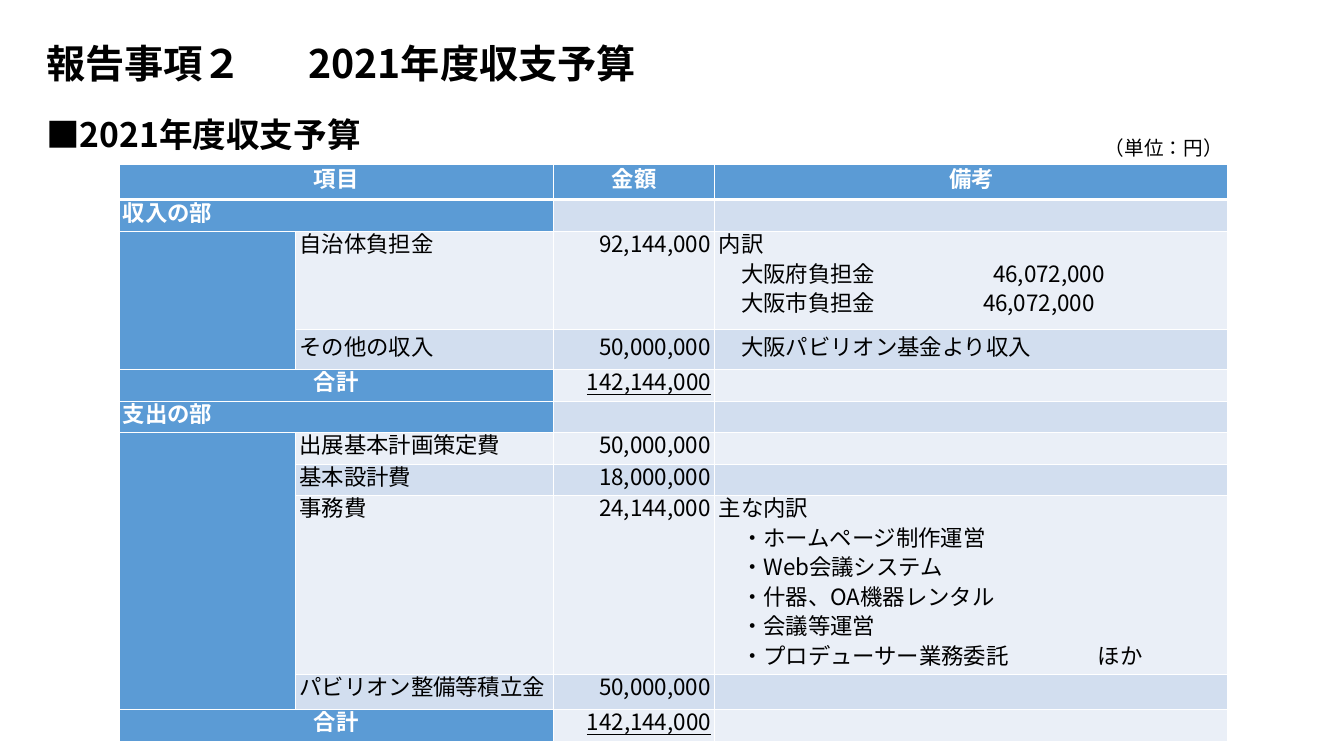
from lxml.etree import SubElement
from pptx import Presentation
from pptx.dml.color import RGBColor
from pptx.enum.lang import MSO_LANGUAGE_ID
from pptx.enum.text import MSO_ANCHOR, PP_ALIGN
from pptx.oxml.ns import qn
from pptx.util import Inches, Pt

FONT = "Noto Sans CJK JP"
HUE = {"head": "5B9BD5", "dark": "D2DEEF", "pale": "EAEFF7",
       "white": "FFFFFF", "black": "000000"}
TITLE = "報告事項２\t2021年度収支予算"
SUB = "■2021年度収支予算"
UNIT = "（単位：円）"

# Each note line: text, tab stop in inches
SHARES = [("内訳", 0),
          ("　大阪府負担金\t46,072,000", 2.72),
          ("　大阪市負担金\t46,072,000", 2.62)]
FUND = [("　大阪パビリオン基金より収入", 0)]
COSTS = [("主な内訳", 0),
         ("　・ホームページ制作運営", 0),
         ("　・Web会議システム", 0),
         ("　・什器、OA機器レンタル", 0),
         ("　・会議等運営", 0),
         ("　・プロデューサー業務委託\tほか", 3.76)]

# Each row: kind, label, amount, notes, height, vertical centring
ROWS = [
    ("top", "項目", "金額", [("備考", 0)], 0.35, True),
    ("part", "収入の部", "", [], 0.32, True),
    ("item", "自治体負担金", "92,144,000", SHARES, 0.97, False),
    ("item", "その他の収入", "50,000,000", FUND, 0.4, True),
    ("sum", "合計", "142,144,000", [], 0.31, True),
    ("part", "支出の部", "", [], 0.31, True),
    ("item", "出展基本計画策定費", "50,000,000", [], 0.31, False),
    ("item", "基本設計費", "18,000,000", [], 0.31, False),
    ("item", "事務費", "24,144,000", COSTS, 1.77, False),
    ("item", "パビリオン整備等積立金", "50,000,000", [], 0.35, False),
    ("sum", "合計", "142,144,000", [], 0.31, False),
]
COLS = [1.75, 2.56, 1.6, 5.09]
GROUPS = [(2, 3), (6, 9)]


def rgb(name):
    return RGBColor.from_string(HUE[name])


def write(frame, lines, size=16, color="black", bold=False, under=False,
          align=PP_ALIGN.LEFT, lead=None, gap=0):
    for n, (text, tab) in enumerate(lines):
        para = frame.add_paragraph() if n else frame.paragraphs[0]
        para.alignment = align
        para.space_before = Pt(gap)
        if lead:
            para.line_spacing = lead
        if tab:
            stops = SubElement(para._p.get_or_add_pPr(), qn("a:tabLst"))
            SubElement(stops, qn("a:tab"), pos=str(Inches(tab)), algn="l")
        if not text:
            # A small end mark keeps empty cells from stretching their row
            SubElement(para._p, qn("a:endParaRPr"), sz="600")
            continue
        run = para.add_run()
        run.text = text
        font = run.font
        font.size, font.name = Pt(size), FONT
        font.bold, font.underline = bold, under
        font.language_id = MSO_LANGUAGE_ID.JAPANESE
        font.color.rgb = rgb(color)
        SubElement(run._r.get_or_add_rPr(), qn("a:ea"), typeface=FONT)


def paint(cell, color, top):
    """Fill the cell and give it white borders, thicker under the top row."""
    props = cell._tc.get_or_add_tcPr()
    for side in ("lnL", "lnR", "lnT", "lnB"):
        wide = 3 if top and side == "lnB" else 1
        line = SubElement(props, qn("a:" + side), w=str(Pt(wide)))
        ink = SubElement(line, qn("a:solidFill"))
        SubElement(ink, qn("a:srgbClr"), val=HUE["white"])
    cell.fill.solid()
    cell.fill.fore_color.rgb = rgb(color)


def fill(cell, lines, middle, **form):
    cell.margin_left = cell.margin_right = cell.margin_bottom = Inches(0.04)
    cell.margin_top = Inches(0.12)
    cell.vertical_anchor = MSO_ANCHOR.MIDDLE if middle else MSO_ANCHOR.TOP
    write(cell.text_frame, lines or [("", 0)], lead=Pt(11), gap=10, **form)


def place(shape, *box):
    shape.left, shape.top, shape.width, shape.height = map(Inches, box)


def label(slide, box, text, wrap=True, **form):
    frame = slide.shapes.add_textbox(*map(Inches, box)).text_frame
    frame.word_wrap = wrap
    frame.vertical_anchor = MSO_ANCHOR.MIDDLE if wrap else MSO_ANCHOR.TOP
    write(frame, [(text, 0)], **form)


def budget(slide):
    high = sum(row[4] for row in ROWS)
    table = slide.shapes.add_table(
        len(ROWS), len(COLS), *map(Inches, (1.18, 1.63, sum(COLS), high))).table
    for col, wide in zip(table.columns, COLS):
        col.width = Inches(wide)
    for r, (kind, name, amount, notes, tall, middle) in enumerate(ROWS):
        table.rows[r].height = Inches(tall)
        top, item = kind == "top", kind == "item"
        band = "dark" if r % 2 else "pale"
        for c in range(len(COLS)):
            blue = top or c == 0 or (c == 1 and not item)
            paint(table.cell(r, c), "head" if blue else band, top)
        mid = PP_ALIGN.CENTER
        plain = {"color": "white" if top else "black", "bold": top}
        fill(table.cell(r, 0 if item else 1), [], middle)
        fill(table.cell(r, 1 if item else 0), [(name, 0)], middle,
             color="black" if item else "white", bold=not item,
             align=mid if kind in ("top", "sum") else PP_ALIGN.LEFT)
        fill(table.cell(r, 2), [(amount, 0)], middle, under=kind == "sum",
             align=mid if top else PP_ALIGN.RIGHT, **plain)
        fill(table.cell(r, 3), notes, middle,
             align=mid if top else PP_ALIGN.LEFT, **plain)
        if not item:
            table.cell(r, 0).merge(table.cell(r, 1))
    for first, last in GROUPS:
        table.cell(first, 0).merge(table.cell(last, 0))


def main():
    deck = Presentation()
    deck.slide_width, deck.slide_height = Inches(13.33), Inches(7.5)
    slide = deck.slides.add_slide(deck.slide_layouts[5])
    label(slide, (10.86, 1.3, 1.38, 0.34), UNIT, wrap=False, size=14)
    budget(slide)
    title = slide.shapes.title
    place(title, 0.36, 0.17, 11.5, 0.97)
    title.text_frame.vertical_anchor = MSO_ANCHOR.MIDDLE
    write(title.text_frame, [(TITLE, 2.6)], size=28, bold=True, lead=0.9)
    label(slide, (0.36, 0.93, 11.5, 0.8), SUB, size=24, bold=True)
    deck.save("out.pptx")


if __name__ == "__main__":
    main()
